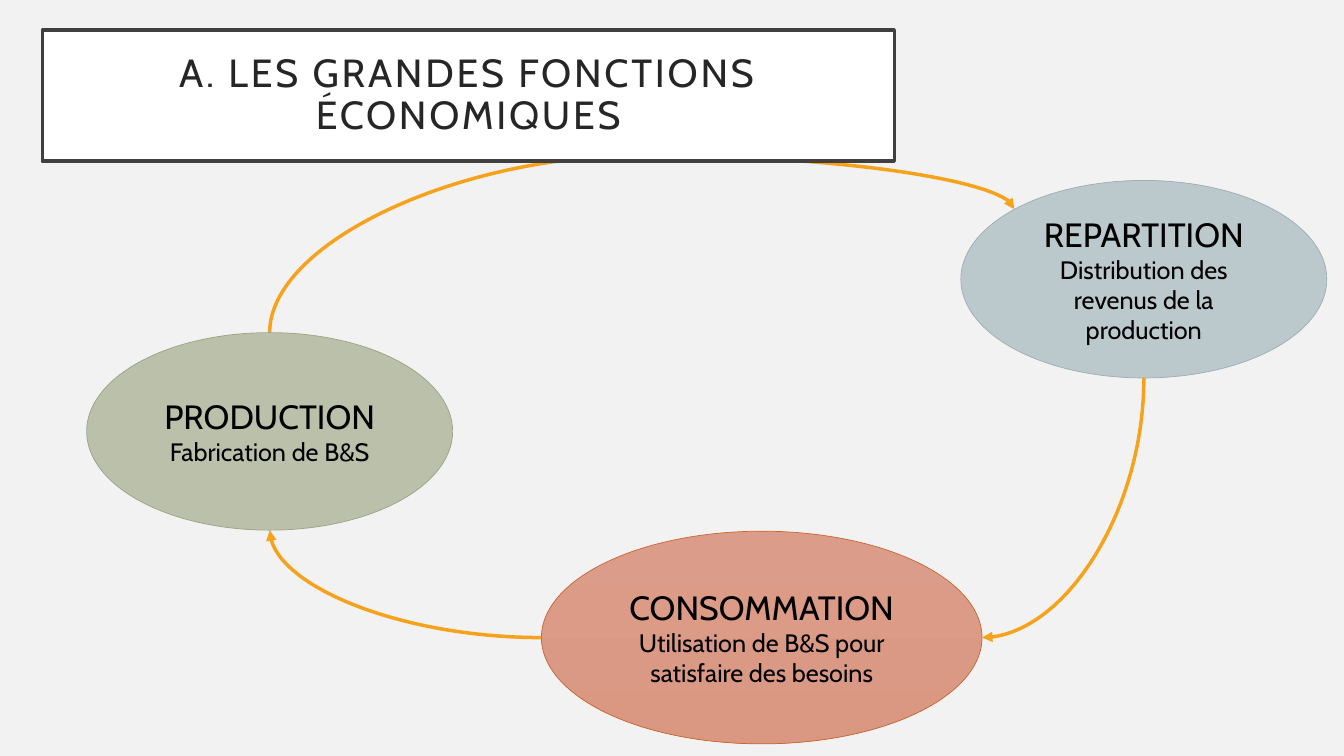
import pptx
import pptx.dml.color
import pptx.enum.shapes
import pptx.enum.text
import pptx.oxml
import pptx.oxml.ns
import pptx.util

Inches = pptx.util.Inches
Pt = pptx.util.Pt
FONT = "Cabin"
ARROW_COLOR = "F6A21D"
# Connection sites of an ellipse: number and position as a share of its box
SITES = {"top": (0, 0.5, 0), "top left": (1, 0.146, 0.146), "left": (2, 0, 0.5),
         "bottom": (4, 0.5, 1), "right": (6, 1, 0.5)}


def color(hex_string):
    return pptx.dml.color.RGBColor.from_string(hex_string)


def add_xml(parent, tag, **attributes):
    child = pptx.oxml.parse_xml(f"<a:{tag} {pptx.oxml.ns.nsdecls('a')}/>")
    for name, value in attributes.items():
        child.set(name, str(value))
    parent.append(child)
    return child


def write(paragraph, text, size, ink="000000", tracking=None, line_spacing=None):
    paragraph.alignment = pptx.enum.text.PP_ALIGN.CENTER
    paragraph.line_spacing = line_spacing
    run = paragraph.add_run()
    run.text = text
    run.font.name = FONT
    run.font.size = Pt(size)
    run.font.color.rgb = color(ink)
    if tracking:
        run.font._element.set("spc", str(tracking * 100))


def outline(line, hex_string, width):
    line.color.rgb = color(hex_string)
    line.width = Pt(width)


def build_title(slide, box, text):
    title = slide.shapes.title
    title.left, title.top, title.width, title.height = map(Inches, box)
    title.fill.solid()
    title.fill.fore_color.rgb = color("FFFFFF")
    outline(title.line, "404040", 2.5)
    frame = title.text_frame
    frame.word_wrap = True
    frame.auto_size = pptx.enum.text.MSO_AUTO_SIZE.NONE
    frame.vertical_anchor = pptx.enum.text.MSO_ANCHOR.MIDDLE
    frame.margin_left = frame.margin_right = Inches(0.2)
    frame.margin_top = frame.margin_bottom = Inches(0.2)
    write(frame.paragraphs[0], text, 28, ink="262626", tracking=2, line_spacing=0.9)


def build_function(slide, box, name, definition, gradient, border):
    ellipse = slide.shapes.add_shape(
        pptx.enum.shapes.MSO_SHAPE.OVAL, *map(Inches, box))
    ellipse.shadow.inherit = False
    ellipse.fill.gradient()
    ellipse.fill.gradient_angle = 270
    for stop, shade in zip(ellipse.fill.gradient_stops, gradient):
        stop.color.rgb = color(shade)
    outline(ellipse.line, border, 0.5)
    frame = ellipse.text_frame
    frame.word_wrap = True
    frame.vertical_anchor = pptx.enum.text.MSO_ANCHOR.MIDDLE
    write(frame.paragraphs[0], name, 24)
    write(frame.add_paragraph(), definition, 18)
    return ellipse


def build_arrow(slide, source, source_site, target, target_site,
                preset="curvedConnector2", turn=0, flip=False, bend=None):
    ends = []
    for ellipse, site in ((source, source_site), (target, target_site)):
        _, across, down = SITES[site]
        ends.append((ellipse.left + int(across * ellipse.width),
                     ellipse.top + int(down * ellipse.height)))
    (x1, y1), (x2, y2) = ends
    width, height = abs(x2 - x1), abs(y2 - y1)
    if turn % 180:  # a quarter turn swaps the sides of the unrotated box
        width, height = height, width
    left, top = (x1 + x2 - width) // 2, (y1 + y2 - height) // 2
    arrow = slide.shapes.add_connector(
        pptx.enum.shapes.MSO_CONNECTOR.CURVE, left, top, left + width, top + height)
    outline(arrow.line, ARROW_COLOR, 2.5)

    # Direction and curvature
    properties = arrow._element.spPr
    frame = properties.find(pptx.oxml.ns.qn("a:xfrm"))
    frame.set("rot", str(turn * 60000))
    if flip:
        frame.set("flipH", "1")
        frame.set("flipV", "1")
    geometry = properties.find(pptx.oxml.ns.qn("a:prstGeom"))
    geometry.set("prst", preset)
    if bend:
        guides = geometry.find(pptx.oxml.ns.qn("a:avLst"))
        add_xml(guides, "gd", name="adj1", fmla=f"val {int(bend * 100000)}")

    # Arrowhead, no shadow
    add_xml(properties.find(pptx.oxml.ns.qn("a:ln")), "tailEnd", type="triangle")
    add_xml(properties, "effectLst")

    # Attachment to the two ellipses
    links = arrow._element.nvCxnSpPr.cNvCxnSpPr
    for tag, ellipse, site in (("stCxn", source, source_site),
                               ("endCxn", target, target_site)):
        add_xml(links, tag, id=ellipse.shape_id, idx=SITES[site][0])
    return arrow


def build_circuit(slide):
    production = build_function(
        slide, (0.86, 3.3, 3.63, 1.96), "PRODUCTION", "Fabrication de B&S",
        ("BBC0AB", "B9BEA8"), "9CA383")
    consumption = build_function(
        slide, (5.37, 5.27, 4.37, 2.11), "CONSOMMATION",
        "Utilisation de B&S pour satisfaire des besoins",
        ("DB9C89", "DA9882"), "C96731")
    distribution = build_function(
        slide, (9.53, 1.79, 3.63, 1.96), "REPARTITION",
        "Distribution des revenus de la production",
        ("BBC8CC", "B8C6CB"), "9BAFB5")
    upper_arrow = build_arrow(slide, production, "top", distribution, "top left",
                              preset="curvedConnector3", turn=90, flip=True, bend=1.437)
    build_arrow(slide, consumption, "left", production, "bottom", turn=180)
    build_arrow(slide, distribution, "bottom", consumption, "right", turn=90)
    # The upper arrow passes behind the title
    slide.shapes.title._element.addprevious(upper_arrow._element)


def main():
    deck = pptx.Presentation()
    deck.slide_width, deck.slide_height = Inches(13.33), Inches(7.5)
    slide = deck.slides.add_slide(deck.slide_layouts[5])
    slide.background.fill.solid()
    slide.background.fill.fore_color.rgb = color("F2F2F2")
    build_title(slide, (0.42, 0.3, 8.45, 1.3), "A. LES GRANDES FONCTIONS ÉCONOMIQUES")
    build_circuit(slide)
    deck.save("out.pptx")


if __name__ == "__main__":
    main()
